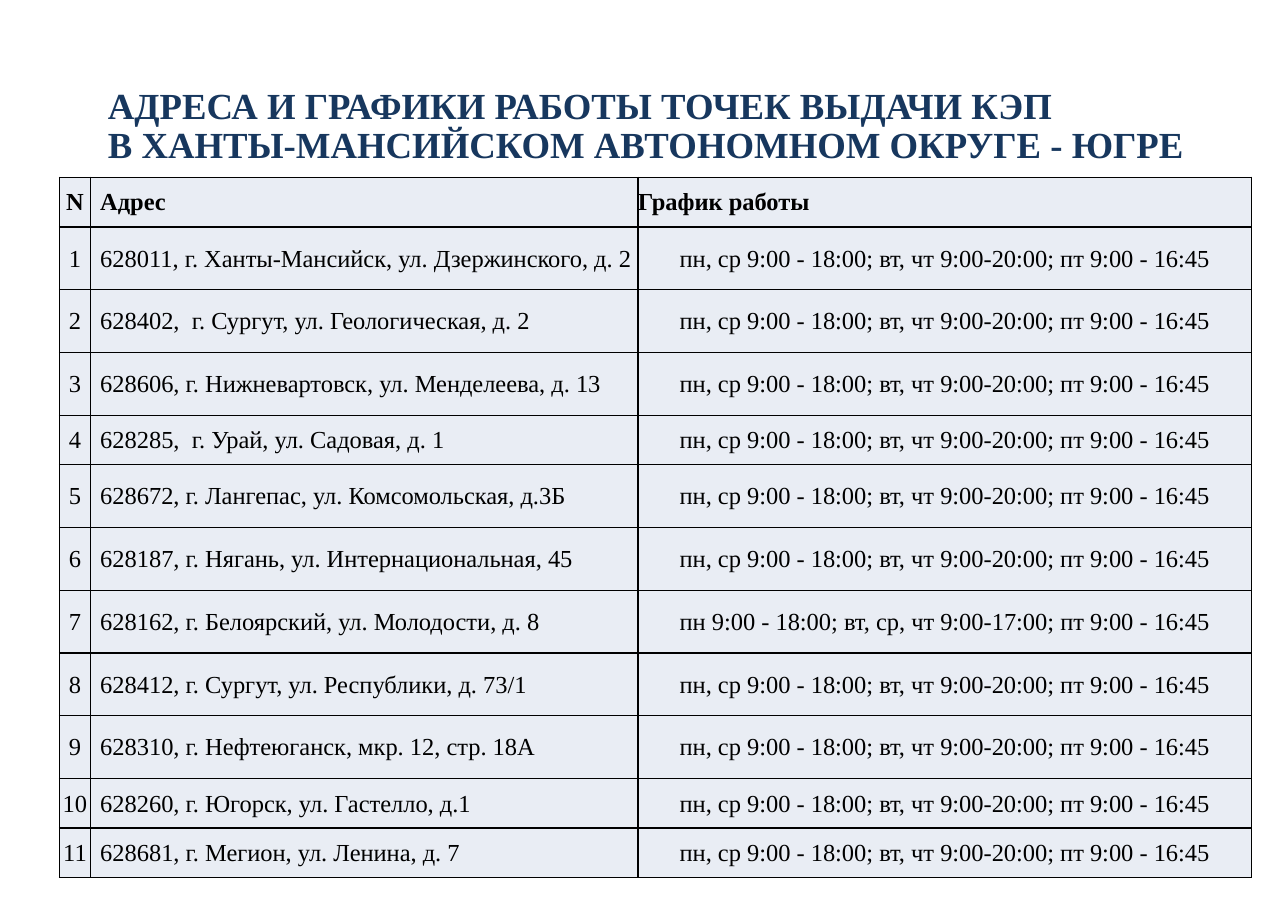
from typing import NamedTuple

from lxml.etree import SubElement
from pptx import Presentation
from pptx.dml.color import RGBColor
from pptx.enum.text import MSO_ANCHOR as Anchor, MSO_AUTO_SIZE as AutoSize, PP_ALIGN as Align
from pptx.oxml.ns import qn
from pptx.util import Emu, Pt

FONT = "Times New Roman"
NAVY, BLACK, PALE = "17375E", "000000", "E9EDF4"
USUAL_HOURS = "пн, ср 9:00 - 18:00; вт, чт 9:00-20:00; пт 9:00 - 16:45"
TALL, LOW = 57, 45


class Office(NamedTuple):
    address: str
    height: int = TALL
    hours: str = USUAL_HOURS


class Column(NamedTuple):
    heading: str
    width: int
    heading_align: Align
    align: Align
    margin: int = 0


COLUMNS = [
    Column("N", 28, Align.CENTER, Align.CENTER),
    Column("Адрес", 497, Align.LEFT, Align.LEFT, 9),
    Column("График работы", 557, Align.LEFT, Align.CENTER),
]
OFFICES = [
    Office("628011, г. Ханты-Мансийск, ул. Дзержинского, д. 2"),
    Office("628402,  г. Сургут, ул. Геологическая, д. 2"),
    Office("628606, г. Нижневартовск, ул. Менделеева, д. 13"),
    Office("628285,  г. Урай, ул. Садовая, д. 1", LOW),
    Office("628672, г. Лангепас, ул. Комсомольская, д.3Б"),
    Office("628187, г. Нягань, ул. Интернациональная, 45"),
    Office("628162, г. Белоярский, ул. Молодости, д. 8",
           hours="пн 9:00 - 18:00; вт, ср, чт 9:00-17:00; пт 9:00 - 16:45"),
    Office("628412, г. Сургут, ул. Республики, д. 73/1"),
    Office("628310, г. Нефтеюганск, мкр. 12, стр. 18А"),
    Office("628260, г. Югорск, ул. Гастелло, д.1", LOW),
    Office("628681, г. Мегион, ул. Ленина, д. 7", LOW),
]


def px(length: int) -> Emu:
    return Emu(length * 9144)


def color(value: str) -> RGBColor:
    return RGBColor.from_string(value)


def format_runs(paragraph, size: int, value: str, bold: bool) -> None:
    for run in paragraph.runs:
        run.font.name = FONT
        run.font.size = Pt(size)
        run.font.bold = bold
        run.font.color.rgb = color(value)


def add_borders(cell) -> None:
    properties = cell._tc.get_or_add_tcPr()
    for side in ("lnL", "lnR", "lnT", "lnB"):
        line = SubElement(properties, qn(f"a:{side}"), w=str(Pt(1)))
        fill = SubElement(line, qn("a:solidFill"))
        SubElement(fill, qn("a:srgbClr"), val=BLACK)


def fill_cell(cell, text: str, align: Align, margin: int, bold: bool) -> None:
    add_borders(cell)
    cell.fill.solid()
    cell.fill.fore_color.rgb = color(PALE)
    cell.vertical_anchor = Anchor.MIDDLE
    cell.margin_left, cell.margin_top = px(margin), px(1)
    cell.margin_right = cell.margin_bottom = 0
    cell.text_frame.text = text
    paragraph = cell.text_frame.paragraphs[0]
    paragraph.alignment = align
    format_runs(paragraph, 16, BLACK, bold)


def set_title(slide) -> None:
    title = slide.shapes.title
    title.left, title.top, title.width, title.height = map(px, (88, 72, 1026, 87))
    frame = title.text_frame
    frame.text = ("АДРЕСА И ГРАФИКИ РАБОТЫ ТОЧЕК ВЫДАЧИ КЭП\v"
                  "В ХАНТЫ-МАНСИЙСКОМ АВТОНОМНОМ ОКРУГЕ - ЮГРЕ")
    frame.word_wrap = True
    frame.auto_size = AutoSize.NONE
    frame.vertical_anchor = Anchor.MIDDLE
    paragraph = frame.paragraphs[0]
    paragraph.alignment = Align.LEFT
    paragraph.line_spacing = 0.9
    format_runs(paragraph, 24, NAVY, True)


def add_schedule(slide) -> None:
    heights = [LOW] + [office.height for office in OFFICES]
    width = sum(column.width for column in COLUMNS)
    table = slide.shapes.add_table(len(heights), len(COLUMNS), px(54), px(161),
                                   px(width), px(sum(heights))).table
    table.first_row = table.horz_banding = False
    for row, height in zip(table.rows, heights):
        row.height = px(height)
    for index, column in enumerate(COLUMNS):
        table.columns[index].width = px(column.width)
        fill_cell(table.cell(0, index), column.heading, column.heading_align, column.margin, True)
    for number, office in enumerate(OFFICES, 1):
        texts = (str(number), office.address, office.hours)
        for index, (column, text) in enumerate(zip(COLUMNS, texts)):
            fill_cell(table.cell(number, index), text, column.align, column.margin, False)


def main() -> None:
    presentation = Presentation()
    presentation.slide_width, presentation.slide_height = px(1169), px(827)
    slide = presentation.slides.add_slide(presentation.slide_layouts[5])
    set_title(slide)
    add_schedule(slide)
    presentation.save("out.pptx")


if __name__ == "__main__":
    main()
